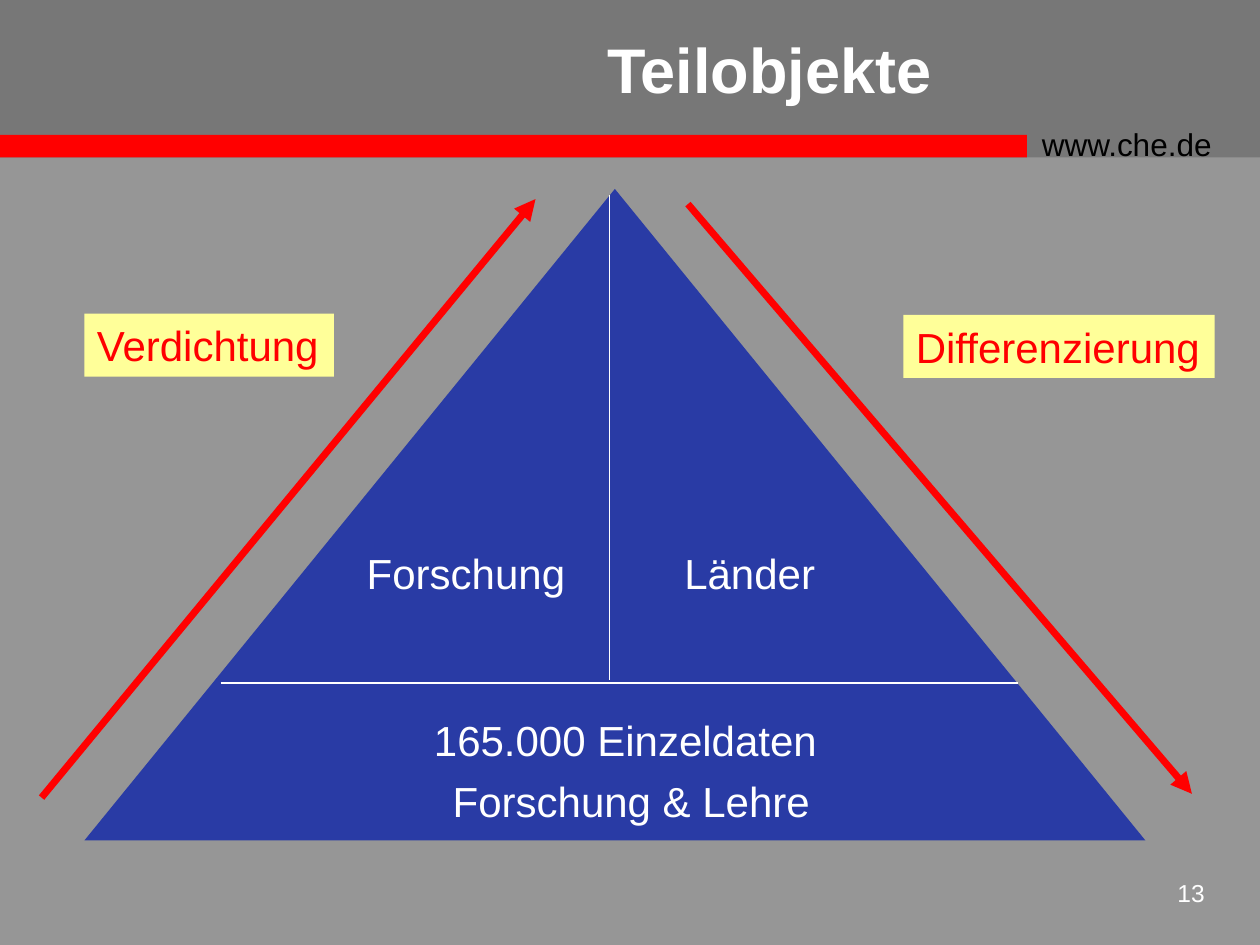
from dataclasses import dataclass

import pptx
import pptx.dml.color
import pptx.enum.shapes
import pptx.enum.text
import pptx.oxml
import pptx.oxml.ns
import pptx.util
from pptx.util import Inches

Shape = pptx.enum.shapes.MSO_SHAPE
Align = pptx.enum.text.PP_ALIGN
Anchor = pptx.enum.text.MSO_ANCHOR

WHITE = "FFFFFF"
RED = "FF0000"
BLACK = "000000"
YELLOW = "FFFF99"


@dataclass
class Label:
    lines: list[str]
    left: float
    top: float
    width: float
    height: float
    size: int = 24
    color: str = WHITE
    align: Align = Align.LEFT
    anchor: Anchor = Anchor.TOP
    bold: bool = False
    wrap: bool = True
    fill: str | None = None


@dataclass
class Line:
    start: tuple[float, float]
    end: tuple[float, float]
    color: str = WHITE
    width: float = 0.75
    arrow: bool = False


def rgb(value: str) -> pptx.dml.color.RGBColor:
    return pptx.dml.color.RGBColor.from_string(value)


def draw_block(slide, kind: Shape, left: float, top: float, width: float, height: float, color: str):
    block = slide.shapes.add_shape(kind, Inches(left), Inches(top), Inches(width), Inches(height))
    block.shadow.inherit = False
    block.fill.solid()
    block.fill.fore_color.rgb = rgb(color)
    block.line.fill.background()
    return block


def draw_label(slide, label: Label) -> None:
    area = (label.left, label.top, label.width, label.height)
    if label.fill:
        holder = draw_block(slide, Shape.RECTANGLE, *area, label.fill)
    else:
        holder = slide.shapes.add_textbox(*map(Inches, area))
    frame = holder.text_frame
    frame.word_wrap = label.wrap
    frame.vertical_anchor = label.anchor
    for index, words in enumerate(label.lines):
        paragraph = frame.add_paragraph() if index else frame.paragraphs[0]
        paragraph.alignment = label.align
        if index:
            paragraph.space_before = pptx.util.Pt(6)
        run = paragraph.add_run()
        run.text = words
        run.font.name = "Arial"
        run.font.size = pptx.util.Pt(label.size)
        run.font.bold = label.bold
        run.font.color.rgb = rgb(label.color)


def draw_line(slide, line: Line) -> None:
    connector = slide.shapes.add_connector(
        pptx.enum.shapes.MSO_CONNECTOR.STRAIGHT, *map(Inches, line.start + line.end)
    )
    connector.line.color.rgb = rgb(line.color)
    connector.line.width = pptx.util.Pt(line.width)
    if line.arrow:
        tail = pptx.oxml.parse_xml(f'<a:tailEnd {pptx.oxml.ns.nsdecls("a")} type="triangle"/>')
        connector.line._get_or_add_ln().append(tail)
    properties = connector._element.spPr
    properties.append(pptx.oxml.parse_xml(f'<a:effectLst {pptx.oxml.ns.nsdecls("a")}/>'))


HEADER = [
    Label(["www.che.de"], 8.17, 0.94, 1.75, 0.4, size=18, color=BLACK),
    Label(["13"], 9.08, 6.92, 0.58, 0.42, size=14, align=Align.RIGHT),
    Label(["Teilobjekte"], 2.65, 0, 6.91, 1.08, size=36, bold=True,
          align=Align.CENTER, anchor=Anchor.MIDDLE),
]
PYRAMID_LABELS = [
    Label(["165.000 Einzeldaten ", "Forschung & Lehre"], 0.42, 5.62, 9.18, 1.32, align=Align.CENTER),
    Label([" Forschung"], 2.72, 4.3, 1.87, 0.5, wrap=False),
    Label([" Länder"], 5.24, 4.3, 1.33, 0.5, wrap=False),
]
DIRECTIONS = [
    Label(["Verdichtung"], 0.67, 2.49, 1.98, 0.5, color=RED, wrap=False, fill=YELLOW),
    Label(["Differenzierung"], 7.17, 2.5, 2.47, 0.5, color=RED, wrap=False, fill=YELLOW),
]
LINES = [
    Line((4.84, 1.55), (4.84, 5.4)),
    Line((1.75, 5.42), (8.08, 5.42)),
    Line((0.33, 6.33), (4.25, 1.58), RED, 4, arrow=True),
    Line((5.46, 1.62), (9.46, 6.3), RED, 4, arrow=True),
]


def main() -> None:
    deck = pptx.Presentation()
    deck.slide_width = Inches(10)
    deck.slide_height = Inches(7.5)
    slide = deck.slides.add_slide(deck.slide_layouts[6])
    slide.background.fill.solid()
    slide.background.fill.fore_color.rgb = rgb("969696")

    draw_block(slide, Shape.RECTANGLE, 0, 0, 10, 1.25, "777777")
    draw_block(slide, Shape.RECTANGLE, 0, 1.07, 8.15, 0.18, RED)
    for label in HEADER:
        draw_label(slide, label)
    draw_block(slide, Shape.ISOSCELES_TRIANGLE, 0.67, 1.5, 8.42, 5.17, "293BA5")
    for line in LINES:
        draw_line(slide, line)
    for label in PYRAMID_LABELS + DIRECTIONS:
        draw_label(slide, label)

    deck.save("out.pptx")


if __name__ == "__main__":
    main()
